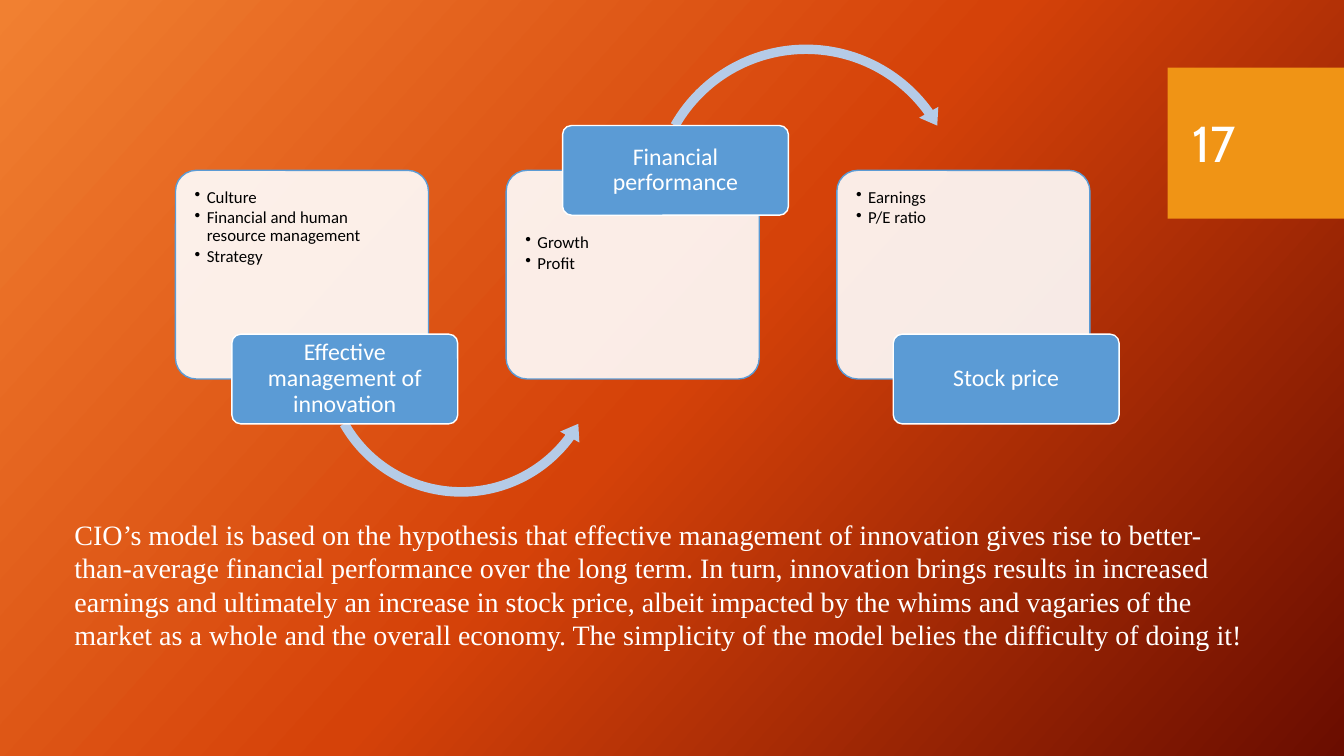
import copy
import pptx
import pptx.util
import pptx.dml.color
import pptx.enum.shapes
import pptx.enum.text
import pptx.oxml
import pptx.oxml.ns

Inches = pptx.util.Inches
Pt = pptx.util.Pt
SHAPE = pptx.enum.shapes.MSO_SHAPE
ANCHOR = pptx.enum.text.MSO_ANCHOR
ALIGN = pptx.enum.text.PP_ALIGN

STAGES = [
    ("Effective management of innovation",
     ["Culture", "Financial and human resource management", "Strategy"], "bottom"),
    ("Financial performance", ["Growth", "Profit"], "top"),
    ("Stock price", ["Earnings", "P/E ratio"], "bottom"),
]
ARROWS = [
    (SHAPE.LEFT_CIRCULAR_ARROW, 3.13, 2.1, 2.89, (0.033, 4.04, 21.796, 90.245, 0.038)),
    (SHAPE.CIRCULAR_ARROW, 6.39, 0.38, 3.21, (0.029, 3.597, 194.648, 125.755, 0.034)),
]
SUMMARY = (
    "CIO’s model is based on the hypothesis that effective management of innovation "
    "gives rise to better-than-average financial performance over the long term. "
    "In turn, innovation brings results in increased earnings and ultimately an increase "
    "in stock price, albeit impacted by the whims and vagaries of the market as a whole "
    "and the overall economy. The simplicity of the model belies the difficulty of doing it!"
)
PAGE = "17"
COLORS = {"white": "FFFFFF", "black": "000000", "blue": "5B9BD5",
          "arrow": "B5CBE7", "page": "F09415"}
BACKDROP = [(0, "F18031"), (0.5, "D54209"), (1, "6A0D00")]

CARD_LEFT, CARD_TOP, CARD_STEP = 1.74, 1.69, 3.28
CARD_WIDTH, CARD_HEIGHT = 2.51, 2.07
LABEL_SHIFT, LABEL_WIDTH, LABEL_HEIGHT = 0.56, 2.24, 0.89
BULLET_INDENT = 0.12


def rgb(value):
    return pptx.dml.color.RGBColor.from_string(value)


def add_block(slide, kind, box, fill, line=None, adjustments=(), opacity=None):
    block = slide.shapes.add_shape(kind, *map(Inches, box))
    block.shadow.inherit = False
    block.fill.solid()
    block.fill.fore_color.rgb = rgb(fill)
    if line:
        block.line.color.rgb = rgb(line)
        block.line.width = Pt(1)
    else:
        block.line.fill.background()
    for index, value in enumerate(adjustments):
        block.adjustments[index] = value
    if opacity:
        color = block.fill._xPr.find(".//" + pptx.oxml.ns.qn("a:srgbClr"))
        color.append(pptx.oxml.parse_xml(
            f'<a:alpha {pptx.oxml.ns.nsdecls("a")} val="{opacity * 1000}"/>'))
    return block


def write(holder, lines, size, font, color, align=ALIGN.LEFT, anchor=ANCHOR.TOP,
          insets=(0.1, 0.05, 0.1, 0.05), spacing=None, after=None, bullets=False):
    frame = holder.text_frame
    frame.word_wrap = True
    frame.vertical_anchor = anchor
    (frame.margin_left, frame.margin_top,
     frame.margin_right, frame.margin_bottom) = map(Inches, insets)
    for index, line in enumerate(lines):
        paragraph = frame.paragraphs[0] if index == 0 else frame.add_paragraph()
        paragraph.text = line
        paragraph.alignment = align
        if spacing:
            paragraph.line_spacing = spacing
        if after:
            paragraph.space_after = Pt(after)
        if bullets:
            props = paragraph._p.get_or_add_pPr()
            props.set("marL", str(Inches(BULLET_INDENT)))
            props.set("indent", str(-Inches(BULLET_INDENT)))
            props.append(pptx.oxml.parse_xml(
                f'<a:buChar {pptx.oxml.ns.nsdecls("a")} char="•"/>'))
        paragraph.font.size = Pt(size)
        paragraph.font.name = font
        paragraph.font.color.rgb = rgb(color)


def paint_background(slide):
    fill = slide.background.fill
    fill.gradient()
    fill.gradient_angle = 360 - 42
    first = fill.gradient_stops[0]._gs
    first.addnext(copy.deepcopy(first))
    for stop, (position, color) in zip(fill.gradient_stops, BACKDROP):
        stop.position = position
        stop.color.rgb = rgb(color)


def main():
    deck = pptx.Presentation()
    deck.slide_width, deck.slide_height = Inches(13.33), Inches(7.5)
    slide = deck.slides.add_slide(deck.slide_layouts[6])
    paint_background(slide)
    add_block(slide, SHAPE.RECTANGLE, (11.58, 0.67, 1.75, 1.5), COLORS["page"])

    for index, (name, points, side) in enumerate(STAGES):
        left = CARD_LEFT + index * CARD_STEP
        card = add_block(slide, SHAPE.ROUNDED_RECTANGLE,
                         (left, CARD_TOP, CARD_WIDTH, CARD_HEIGHT),
                         COLORS["white"], COLORS["blue"], (0.1,), opacity=90)
        top_inset = 0.57 if side == "top" else 0.12
        write(card, points, 12, "Calibri", COLORS["black"], spacing=0.9, after=1.8,
              insets=(0.13, top_inset, 0.13, 0.12), bullets=True)

        if index < len(ARROWS):
            kind, arrow_left, arrow_top, size, adjustments = ARROWS[index]
            add_block(slide, kind, (arrow_left, arrow_top, size, size),
                      COLORS["arrow"], adjustments=adjustments)

        edge = CARD_TOP if side == "top" else CARD_TOP + CARD_HEIGHT
        label = add_block(slide, SHAPE.ROUNDED_RECTANGLE,
                          (left + LABEL_SHIFT, edge - LABEL_HEIGHT / 2,
                           LABEL_WIDTH, LABEL_HEIGHT),
                          COLORS["blue"], COLORS["white"], (0.1,))
        write(label, [name], 17, "Calibri", COLORS["white"], align=ALIGN.CENTER,
              anchor=ANCHOR.MIDDLE, insets=(0.04, 0.02, 0.04, 0.02), spacing=0.9)

    summary = slide.shapes.add_textbox(*map(Inches, (0.64, 5.08, 11.89, 1.45)))
    write(summary, [SUMMARY], 20, "Times New Roman", COLORS["white"])
    page = slide.shapes.add_textbox(*map(Inches, (11.73, 0.82, 1.26, 1.19)))
    write(page, [PAGE], 36, "Cabin", COLORS["white"], anchor=ANCHOR.MIDDLE)
    deck.save("out.pptx")


if __name__ == "__main__":
    main()
